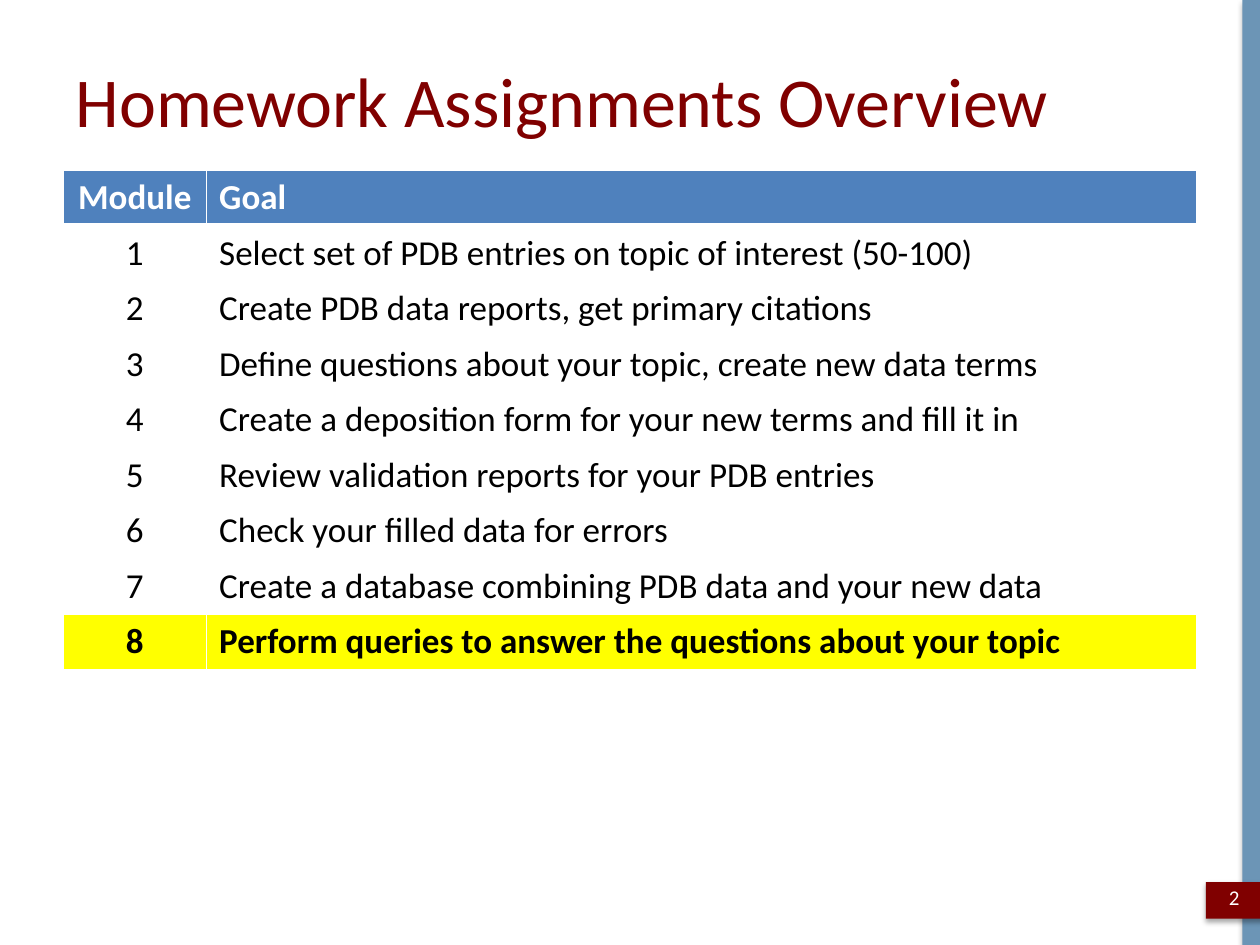
from lxml.etree import SubElement
from pptx import Presentation
from pptx.dml.color import RGBColor
from pptx.enum.shapes import MSO_SHAPE
from pptx.enum.text import MSO_ANCHOR, PP_ALIGN
from pptx.oxml import parse_xml
from pptx.oxml.ns import nsdecls, qn
from pptx.util import Inches, Pt

TITLE = "Homework Assignments Overview"
PAGE_NUMBER = "2"
HEADER = ("Module", "Goal")
GOALS = [
    "Select set of PDB entries on topic of interest (50-100)",
    "Create PDB data reports, get primary citations",
    "Define questions about your topic, create new data terms",
    "Create a deposition form for your new terms and fill it in",
    "Review validation reports for your PDB entries",
    "Check your filled data for errors",
    "Create a database combining PDB data and your new data",
    "Perform queries to answer the questions about your topic",
]
CURRENT_MODULE = 8

FONT = "Calibri"
COLORS = {
    "white": "FFFFFF",
    "black": "000000",
    "maroon": "800000",
    "side": "6C95B6",
    "header": "4F81BD",
    "highlight": "FFFF00",
}
COLUMN_WIDTHS = (1.14, 7.86)
ROW_HEIGHT = 0.41


def color(name):
    return RGBColor.from_string(COLORS[name])


def write(frame, text, size, color_name, align, bold=False):
    frame.text = text
    para = frame.paragraphs[0]
    para.alignment = align
    font = para.runs[0].font
    font.name, font.size, font.bold = FONT, Pt(size), bold
    font.color.rgb = color(color_name)


def add_shadowed_rectangle(slide, left, top, width, height, fill):
    shape = slide.shapes.add_shape(
        MSO_SHAPE.RECTANGLE, Inches(left), Inches(top), Inches(width), Inches(height))
    shape.fill.solid()
    shape.fill.fore_color.rgb = color(fill)
    shape.line.fill.background()
    shape.shadow.inherit = False
    effects = shape.element.spPr.find(qn("a:effectLst"))
    effects.append(parse_xml(
        f'<a:outerShdw {nsdecls("a")} blurRad="{Pt(3.1)}" dist="{Pt(1.8)}" dir="5400000" '
        f'rotWithShape="0"><a:srgbClr val="{COLORS["black"]}"><a:alpha val="35000"/>'
        '</a:srgbClr></a:outerShdw>'))


def set_borders(cell, bottom_width):
    """Give the cell white borders; must run before its fill is set."""
    properties = cell._tc.get_or_add_tcPr()
    for side, width in (("L", 1), ("R", 1), ("T", 1), ("B", bottom_width)):
        line = SubElement(properties, qn(f"a:ln{side}"), w=str(Pt(width)))
        fill = SubElement(line, qn("a:solidFill"))
        SubElement(fill, qn("a:srgbClr"), val=COLORS["white"])


def add_module_table(slide):
    rows = [HEADER] + [(str(number), goal) for number, goal in enumerate(GOALS, 1)]
    table = slide.shapes.add_table(
        len(rows), len(HEADER), Inches(0.5), Inches(1.35),
        Inches(sum(COLUMN_WIDTHS)), Inches(ROW_HEIGHT * len(rows))).table
    for column, width in zip(table.columns, COLUMN_WIDTHS):
        column.width = Inches(width)
    for row_index, values in enumerate(rows):
        table.rows[row_index].height = Inches(ROW_HEIGHT)
        is_header = row_index == 0
        is_current = row_index == CURRENT_MODULE
        fill = "header" if is_header else "highlight" if is_current else None
        for column_index, text in enumerate(values):
            cell = table.cell(row_index, column_index)
            set_borders(cell, 3 if is_header else 1)
            if fill:
                cell.fill.solid()
                cell.fill.fore_color.rgb = color(fill)
            else:
                cell.fill.background()
            write(cell.text_frame, text, 20, "white" if is_header else "black",
                  PP_ALIGN.LEFT if column_index else PP_ALIGN.CENTER,
                  is_header or is_current)


def main():
    deck = Presentation()
    deck.slide_width, deck.slide_height = Inches(10), Inches(7.5)
    slide = deck.slides.add_slide(deck.slide_layouts[5])

    add_shadowed_rectangle(slide, 9.86, 0, 0.14, 7.5, "side")
    add_shadowed_rectangle(slide, 9.57, 7, 0.48, 0.29, "maroon")

    title = slide.shapes.title
    title.left, title.top = Inches(0.5), Inches(0.3)
    title.width, title.height = Inches(9), Inches(0.98)
    title.text_frame.vertical_anchor = MSO_ANCHOR.MIDDLE
    write(title.text_frame, TITLE, 40, "maroon", PP_ALIGN.LEFT)

    add_module_table(slide)

    page_box = slide.shapes.add_textbox(
        Inches(9.57), Inches(6.92), Inches(0.45), Inches(0.4))
    page_box.text_frame.word_wrap = True
    page_box.text_frame.vertical_anchor = MSO_ANCHOR.MIDDLE
    write(page_box.text_frame, PAGE_NUMBER, 12, "white", PP_ALIGN.CENTER)

    deck.save("out.pptx")


if __name__ == "__main__":
    main()
